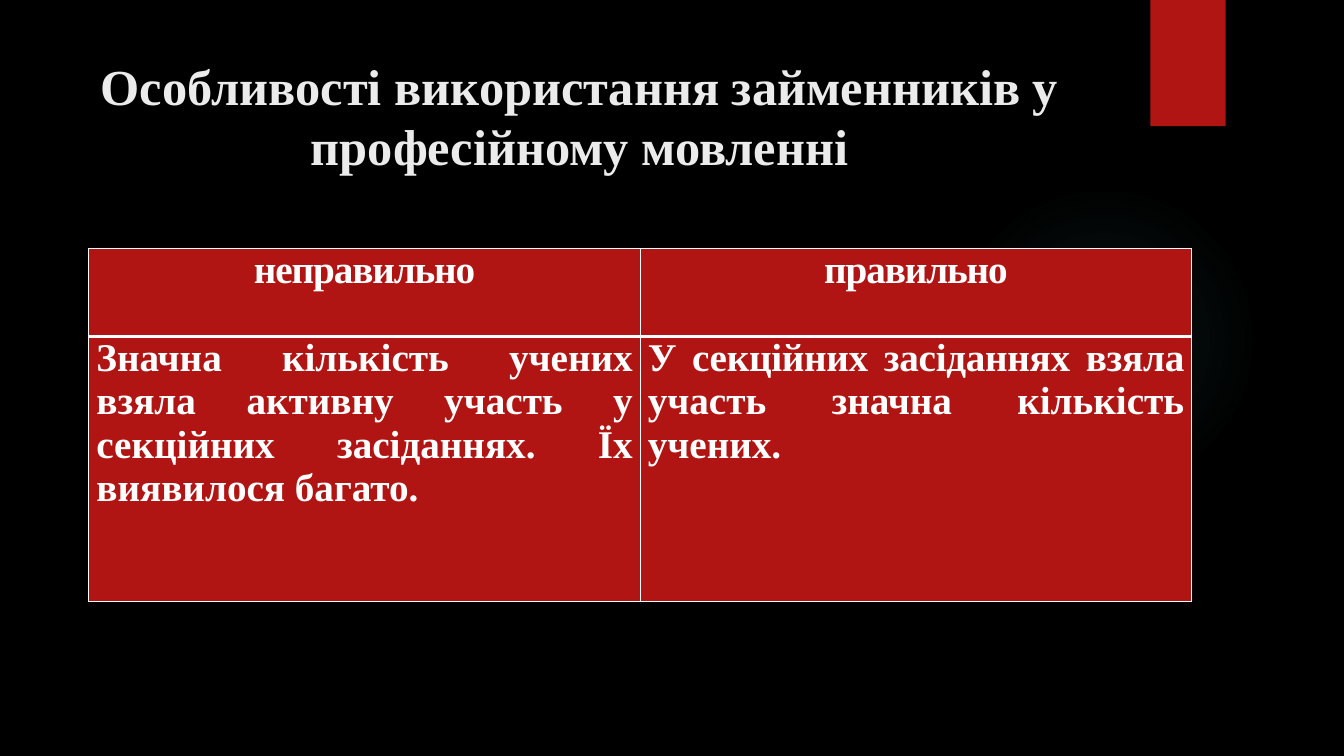
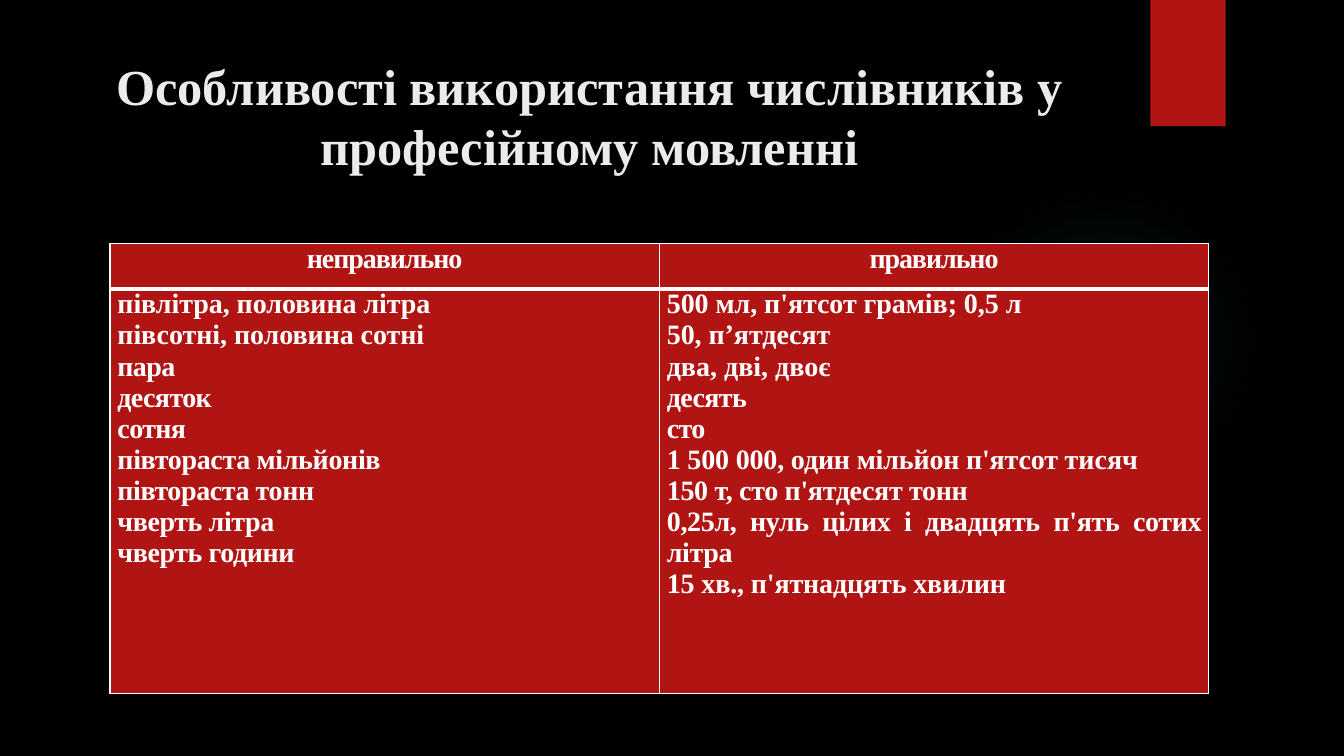
from dataclasses import dataclass

from lxml.etree import SubElement
from pptx import Presentation
from pptx.dml.color import RGBColor
from pptx.enum.shapes import MSO_SHAPE
from pptx.enum.text import MSO_ANCHOR, MSO_AUTO_SIZE, PP_ALIGN
from pptx.oxml import parse_xml
from pptx.oxml.ns import nsdecls, qn
from pptx.util import Cm, Pt


@dataclass(frozen=True)
class Theme:
    back: str = "000000"
    red: str = "B01513"
    glow: str = "50B9C1"
    head: str = "EBEBEB"
    text: str = "FFFFFF"
    font: str = "Times New Roman"
    title: int = 36
    thin: int = 1
    thick: int = 3


THEME = Theme()
HEADS = ("неправильно", "правильно")

# Each cell is a list of paragraphs, each paragraph a list of (text, spacing) runs.
PAGES = [
    {
        "title": "Особливості використання займенників у професійному мовленні",
        "head": (1.3, 1.26, 26.62, 4.11),
        "grid": (2.24, 6.26, 27.79),
        "rows": (2.22, 6.68),
        "size": 28,
        "cells": (
            [[("Значна кількість учених взяла активну участь у секційних "
               "засіданнях. Їх виявилося багато.", 0)]],
            [[("У секційних засіданнях взяла ", -0.2),
              ("участь значна кількість учених.", 0)]],
        ),
    },
    {
        "title": "Особливості використання числівників у професійному мовленні",
        "head": (1.79, 1.26, 26.14, 3.89),
        "grid": (2.77, 6.14, 27.69),
        "rows": (1.14, 10.2),
        "size": 20,
        "cells": (
            [[("півлітра, половина літра", -0.05)],
             [("півсотні, половина сотні", -0.05)],
             [("пара", -0.45)],
             [("десяток", -0.45)],
             [("сотня", -0.45)],
             [("півтораста мільйонів", -0.25)],
             [("півтораста тонн", -0.3)],
             [("чверть літра", -0.3)],
             [("чверть години", -0.3)]],
            [[("500 мл, п'ятсот грамів; 0,5 л", -0.05)],
             [("50, п’ятдесят", -0.05)],
             [("два, дві, двоє", 0)],
             [("десять", -0.45)],
             [("сто", -0.45)],
             [("1 500 000, один мільйон п'ятсот ", -0.15), ("тисяч", 0)],
             [("150 т, сто п'ятдесят тонн", -0.25)],
             [("0,25л, нуль цілих і двадцять п'ять сотих літра", -0.25)],
             [("15 хв., п'ятнадцять хвилин", -0.1)]],
        ),
    },
]


def paint(fill, color):
    fill.solid()
    fill.fore_color.rgb = RGBColor.from_string(color)


def style(font, size, color):
    form = {"name": THEME.font, "size": Pt(size), "bold": True}
    for key, value in form.items():
        setattr(font, key, value)
    font.color.rgb = RGBColor.from_string(color)


def add_shape(slide, kind, box):
    shape = slide.shapes.add_shape(kind, *map(Cm, box))
    shape.shadow.inherit = False
    shape.line.fill.background()
    return shape


def add_glow(slide, box):
    """Add a circle that fades out from its centre."""
    glow = add_shape(slide, MSO_SHAPE.OVAL, box)
    glow.fill.background()
    stops = "".join(
        f'<a:gs pos="{pos}000"><a:srgbClr val="{THEME.glow}">'
        f'<a:alpha val="{alpha}000"/></a:srgbClr></a:gs>'
        for pos, alpha in ((0, 7), (36, 6), (69, 0), (100, 0))
    )
    props = glow.element.spPr
    props.replace(props.find(qn("a:noFill")), parse_xml(
        f'<a:gradFill {nsdecls("a")}><a:gsLst>{stops}</a:gsLst>'
        '<a:path path="circle"><a:fillToRect l="50000" t="50000" '
        'r="50000" b="50000"/></a:path></a:gradFill>'
    ))
    return glow


def dress(layout, slide):
    """Move the shared decor, drawn on a slide, to the layout."""
    paint(layout.background.fill, THEME.back)
    glow = add_glow(slide, (23.9, 4.65, 7.82, 7.82))
    band = add_shape(slide, MSO_SHAPE.RECTANGLE, (28.99, 0, 1.9, 3.18))
    paint(band.fill, THEME.red)
    for shape in (glow, band):
        layout.shapes.element.append(shape.element)


def set_title(slide, text, box):
    title = slide.shapes.title
    for key, value in zip(("left", "top", "width", "height"), box):
        setattr(title, key, Cm(value))
    frame = title.text_frame
    frame.text = text
    form = {"word_wrap": True, "auto_size": MSO_AUTO_SIZE.NONE,
            "vertical_anchor": MSO_ANCHOR.TOP}
    for key, value in form.items():
        setattr(frame, key, value)
    para = frame.paragraphs[0]
    para.alignment = PP_ALIGN.CENTER
    style(para.runs[0].font, THEME.title, THEME.head)


def edge(cell, **widths):
    """Draw cell borders, given in the order L, R, T, B."""
    props = cell._tc.get_or_add_tcPr()
    for side, width in widths.items():
        line = SubElement(props, qn(f"a:ln{side}"), w=str(Pt(width)))
        fill = SubElement(line, qn("a:solidFill"))
        SubElement(fill, qn("a:srgbClr"), val=THEME.text)


def fill_cell(cell, paras, size, align):
    form = {"margin_left": Cm(0.19), "margin_right": Cm(0.19),
            "margin_top": 0, "margin_bottom": 0,
            "vertical_anchor": MSO_ANCHOR.TOP}
    for key, value in form.items():
        setattr(cell, key, value)
    paint(cell.fill, THEME.red)
    frame = cell.text_frame
    for i, runs in enumerate(paras):
        para = frame.add_paragraph() if i else frame.paragraphs[0]
        para.alignment = align
        for text, gap in runs:
            run = para.add_run()
            run.text = text
            style(run.font, size, THEME.text)
            run._r.get_or_add_rPr().set("spc", str(round(gap * 100)))


def add_grid(slide, box, rows, size, cells):
    area = (*box, sum(rows))
    table = slide.shapes.add_table(len(rows), len(HEADS), *map(Cm, area)).table
    table.first_row = table.horz_banding = False
    for row, height in zip(table.rows, rows):
        row.height = Cm(height)
    thin, thick = THEME.thin, THEME.thick
    for col, (head, paras) in enumerate(zip(HEADS, cells)):
        top, body = table.cell(0, col), table.cell(1, col)
        edge(top, L=thin, R=thin, T=thin, B=thick)
        edge(body, L=thin, R=thin, T=thick, B=thin)
        fill_cell(top, [[(head, -0.8)]], size, PP_ALIGN.CENTER)
        fill_cell(body, paras, size, PP_ALIGN.JUSTIFY)


def main():
    deck = Presentation()
    deck.slide_width, deck.slide_height = Cm(33.87), Cm(19.05)
    layout = deck.slide_layouts.get_by_name("Title Only")
    for i, page in enumerate(PAGES):
        slide = deck.slides.add_slide(layout)
        if i == 0:
            dress(layout, slide)
        set_title(slide, page["title"], page["head"])
        add_grid(slide, page["grid"], page["rows"], page["size"], page["cells"])
    deck.save("out.pptx")


if __name__ == "__main__":
    main()
